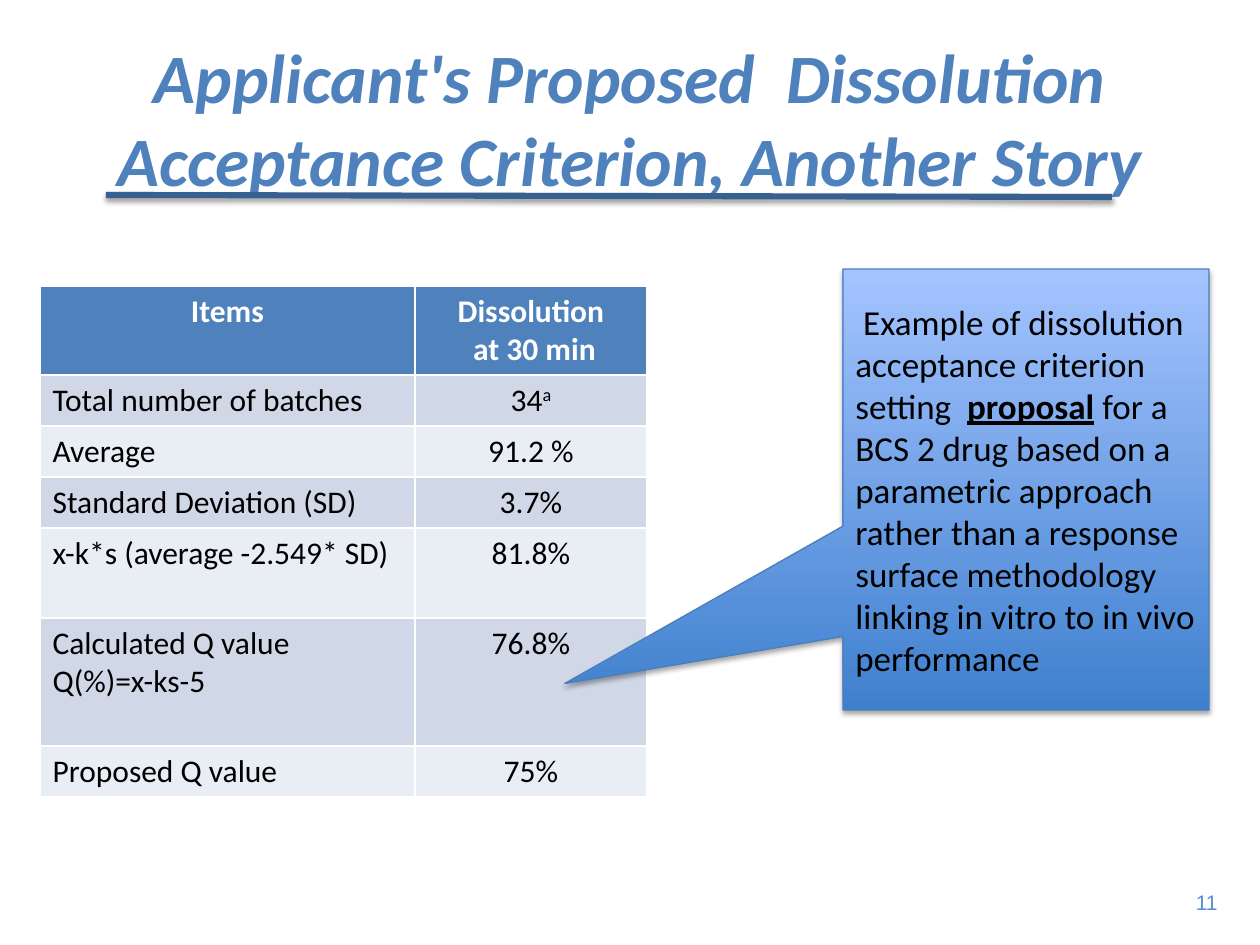
from lxml import etree
from pptx import Presentation
from pptx import util as u
from pptx.dml.color import RGBColor
from pptx.enum import shapes, text
from pptx.oxml.ns import qn

PX = 914400 / 126
CENTER, LEFT, RIGHT = text.PP_ALIGN.CENTER, text.PP_ALIGN.LEFT, text.PP_ALIGN.RIGHT

THEME = {
    "title": {"name": "Calibri", "size": 39.6, "color": "4F81BD", "bold": True, "italic": True},
    "header": {"name": "Calibri", "size": 18, "color": "FFFFFF", "bold": True},
    "body": {"name": "Calibri", "size": 18, "color": "000000", "bold": False},
    "callout": {"name": "Calibri", "size": 20, "color": "000000"},
    "emphasis": {"name": "Calibri", "size": 20, "color": "000000", "bold": True, "underline": True},
    "number": {"name": "Arial", "size": 12, "color": "558ED5"},
    "header_fill": "4F81BD",
    "bands": ("D0D8E8", "E9EDF4"),
    "gradient": ("3F80CE", "A4C4FF"),
    "callout_line": "4B7EBC",
    "rule": "376092",
}

COLUMNS = (375, 232)
ROWS = (
    (89, "Items", "Dissolution\n at 30 min"),
    (51, "Total number of batches", "34^a"),
    (51, "Average", "91.2 %"),
    (51, "Standard Deviation (SD)", "3.7%"),
    (90, "x-k*s (average -2.549* SD)", "81.8%"),
    (128, "Calculated Q value\nQ(%)=x-ks-5", "76.8%"),
    (51, "Proposed Q value", "75%"),
)


def px(*lengths):
    return [u.Emu(round(length * PX)) for length in lengths]


def rgb(value):
    return RGBColor.from_string(value)


def add_run(paragraph, wording, style):
    run = paragraph.add_run()
    run.text = wording
    for key, value in THEME[style].items():
        if key == "color":
            run.font.color.rgb = rgb(value)
        else:
            setattr(run.font, key, u.Pt(value) if key == "size" else value)
    return run


def add_shadow(shape, opacity, blur, distance):
    """Give the shape a soft black shadow straight below; call it after setting the line."""
    properties = shape._element.spPr
    effects = etree.SubElement(properties, qn("a:effectLst"))
    shadow = etree.SubElement(effects, qn("a:outerShdw"), {
        "blurRad": str(u.Pt(blur)), "dist": str(u.Pt(distance)),
        "dir": "5400000", "rotWithShape": "0"})
    color = etree.SubElement(shadow, qn("a:srgbClr"), val="000000")
    etree.SubElement(color, qn("a:alpha"), val=str(opacity * 1000))


def place_title(slide, wording):
    title = slide.shapes.title
    title.left, title.top, title.width, title.height = px(63, 38, 1134, 158)
    frame = title.text_frame
    frame.auto_size = text.MSO_AUTO_SIZE.NONE
    frame.vertical_anchor = text.MSO_ANCHOR.MIDDLE
    paragraph = frame.paragraphs[0]
    paragraph.alignment = CENTER
    add_run(paragraph, wording, "title")


def add_title_rule(slide):
    rule = slide.shapes.add_connector(
        shapes.MSO_CONNECTOR.STRAIGHT, *px(106, 195, 1112, 197))
    rule.line.color.rgb = rgb(THEME["rule"])
    rule.line.width = u.Pt(3.5)
    add_shadow(rule, 38, 3.1, 1.6)


def fill_cell(cell, wording, style, alignment, color):
    """Write one paragraph per line; what follows ^ is superscript."""
    cell.fill.solid()
    cell.fill.fore_color.rgb = rgb(color)
    frame = cell.text_frame
    for index, line in enumerate(wording.split("\n")):
        paragraph = frame.add_paragraph() if index else frame.paragraphs[0]
        paragraph.alignment = alignment
        base, _, superscript = line.partition("^")
        add_run(paragraph, base, style)
        if superscript:
            run = add_run(paragraph, superscript, style)
            run.font._element.set("baseline", "30000")


def add_dissolution_table(slide):
    heights = [row[0] for row in ROWS]
    table = slide.shapes.add_table(
        len(ROWS), len(COLUMNS), *px(40, 286, sum(COLUMNS), sum(heights))).table
    for column, width in zip(table.columns, px(*COLUMNS)):
        column.width = width
    for row, height in zip(table.rows, px(*heights)):
        row.height = height
    for i, (_, *wordings) in enumerate(ROWS):
        style = "body" if i else "header"
        color = THEME["bands"][(i - 1) % 2] if i else THEME["header_fill"]
        for j, wording in enumerate(wordings):
            alignment = LEFT if i and j == 0 else CENTER
            fill_cell(table.cell(i, j), wording, style, alignment, color)


def add_callout(slide, runs):
    callout = slide.shapes.add_shape(
        shapes.MSO_SHAPE.RECTANGULAR_CALLOUT, *px(843, 269, 366, 441))
    callout.adjustments[0] = -1.26
    callout.adjustments[1] = 0.44
    callout.fill.gradient()
    callout.fill.gradient_angle = 90
    for position, (stop, color) in enumerate(zip(callout.fill.gradient_stops, THEME["gradient"])):
        stop.position = position
        stop.color.rgb = rgb(color)
    callout.line.color.rgb = rgb(THEME["callout_line"])
    callout.line.width = u.Pt(0.75)
    add_shadow(callout, 35, 3.1, 1.8)
    frame = callout.text_frame
    frame.word_wrap = True
    frame.vertical_anchor = text.MSO_ANCHOR.MIDDLE
    paragraph = frame.paragraphs[0]
    paragraph.alignment = LEFT
    for wording, style in runs:
        add_run(paragraph, wording, style)


def add_slide_number(slide, number):
    box = slide.shapes.add_textbox(*px(1178, 883, 52, 38))
    box.text_frame.word_wrap = False
    paragraph = box.text_frame.paragraphs[0]
    paragraph.alignment = RIGHT
    add_run(paragraph, number, "number")


def main():
    presentation = Presentation()
    presentation.slide_width, presentation.slide_height = px(1260, 945)
    slide = presentation.slides.add_slide(presentation.slide_layouts.get_by_name("Title Only"))
    add_slide_number(slide, "11")
    place_title(slide, "Applicant's Proposed  Dissolution Acceptance Criterion, Another Story")
    add_dissolution_table(slide)
    add_callout(slide, (
        (" Example of dissolution acceptance criterion setting  ", "callout"),
        ("proposal", "emphasis"),
        (" for a BCS 2 drug based on a parametric approach rather than a response "
         "surface methodology linking in vitro to in vivo performance", "callout"),
    ))
    add_title_rule(slide)
    presentation.save("out.pptx")


if __name__ == "__main__":
    main()
